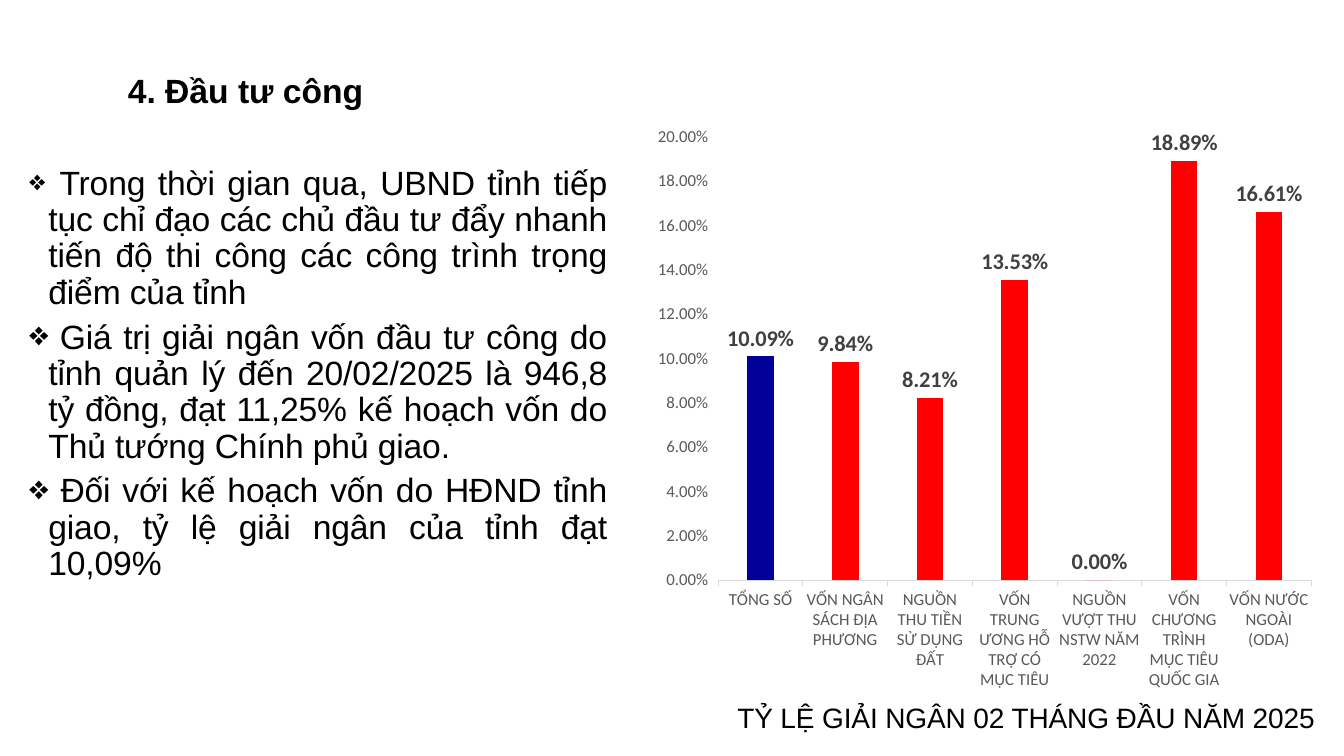
"""Build the public investment slide: bulleted text beside a disbursement rate chart."""
from lxml import etree
from pptx import Presentation
from pptx.chart.data import CategoryChartData
from pptx.dml.color import RGBColor
from pptx.enum.chart import XL_CHART_TYPE, XL_LABEL_POSITION, XL_TICK_MARK
from pptx.enum.text import MSO_ANCHOR, PP_ALIGN
from pptx.oxml.ns import qn
from pptx.util import Inches, Pt

COLUMNS = XL_CHART_TYPE.COLUMN_CLUSTERED
OUTSIDE_END = XL_LABEL_POSITION.OUTSIDE_END
TICK_OUT = XL_TICK_MARK.OUTSIDE
MIDDLE = MSO_ANCHOR.MIDDLE
LEFT, JUSTIFY = PP_ALIGN.LEFT, PP_ALIGN.JUSTIFY

BLACK = RGBColor(0, 0, 0)
RED = RGBColor(0xFF, 0, 0)
NAVY = RGBColor(0, 0, 0x99)
AXIS_GRAY = RGBColor(0x59, 0x59, 0x59)
LABEL_GRAY = RGBColor(0x40, 0x40, 0x40)
LINE_GRAY = RGBColor(0xD9, 0xD9, 0xD9)

HEADING = "4. Đầu tư công"
POINTS = [
    [(" ", 20), ("Trong thời gian qua, UBND tỉnh tiếp tục chỉ đạo các chủ đầu tư đẩy nhanh "
                 "tiến độ thi công các công trình trọng điểm của tỉnh", 24)],
    [(" Giá trị giải ngân vốn đầu tư công do tỉnh quản lý đến 20/02/2025 là 946,8 "
      "tỷ đồng, đạt 11,25% kế hoạch vốn do Thủ tướng Chính phủ giao.", 24)],
    [(" Đối với kế hoạch vốn do HĐND tỉnh giao, tỷ lệ giải ngân của tỉnh đạt 10,09%", 24)],
]
CAPTION = [[(" ", 24), ("TỶ LỆ GIẢI NGÂN 02 THÁNG ĐẦU NĂM 2025", 20)]]
RATES = {
    "TỔNG SỐ": 0.1009,
    "VỐN NGÂN SÁCH ĐỊA PHƯƠNG": 0.0984,
    "NGUỒN THU TIỀN SỬ DỤNG ĐẤT": 0.0821,
    "VỐN TRUNG ƯƠNG HỖ TRỢ CÓ MỤC TIÊU": 0.1353,
    "NGUỒN VƯỢT THU NSTW NĂM 2022": 0,
    "VỐN CHƯƠNG TRÌNH MỤC TIÊU QUỐC GIA": 0.1889,
    "VỐN NƯỚC NGOÀI (ODA)": 0.1661,
}
PERCENT = "0.00%"

HEADING_BOX = (1.17, 0.64, 11.4, 0.91)
POINTS_BOX = (0.19, 1.38, 5.93, 4.67)
CHART_BOX = (6.39, 1.14, 6.75, 5.82)
CAPTION_BOX = (7.12, 6.86, 6.2, 0.5)


def set_font(font, size, color, name="Calibri", bold=False):
    font.size, font.name, font.bold = Pt(size), name, bold
    font.color.rgb = color


def write_text(frame, paragraphs, align=LEFT, bold=False, after=0, line=None,
               tracking=None, bullet=None, indent=0):
    frame.word_wrap = True
    for index, runs in enumerate(paragraphs):
        paragraph = frame.add_paragraph() if index else frame.paragraphs[0]
        paragraph.alignment = align
        paragraph.space_after = Pt(after)
        paragraph.line_spacing = line
        if bullet:
            properties = paragraph._p.get_or_add_pPr()
            properties.set("marL", str(Inches(indent)))
            properties.set("indent", str(-Inches(indent)))
            etree.SubElement(properties, qn("a:buChar")).set("char", bullet)
        for text, size in runs:
            run = paragraph.add_run()
            run.text = text
            set_font(run.font, size, BLACK, name="Arial", bold=bold)
            if tracking:
                run._r.get_or_add_rPr().set("spc", str(tracking))


def add_text_table(slide, box, paragraphs, **text_format):
    table = slide.shapes.add_table(1, 1, *map(Inches, box)).table
    table.first_row = table.horz_banding = False
    cell = table.cell(0, 0)
    cell.fill.background()
    cell.vertical_anchor = MIDDLE
    write_text(cell.text_frame, paragraphs, align=JUSTIFY, after=6, tracking=-10, **text_format)


def add_rate_chart(slide):
    data = CategoryChartData(number_format=PERCENT)
    data.categories = list(RATES)
    data.add_series("Series 1", list(RATES.values()))
    chart = slide.shapes.add_chart(COLUMNS, *map(Inches, CHART_BOX), data).chart
    chart.has_title = chart.has_legend = False
    set_font(chart.font, 10, BLACK)

    for axis in (chart.category_axis, chart.value_axis):
        axis.has_major_gridlines = False
        axis.major_tick_mark = TICK_OUT
        set_font(axis.tick_labels.font, 12, AXIS_GRAY)
    category_line = chart.category_axis.format.line
    category_line.color.rgb, category_line.width = LINE_GRAY, Pt(0.75)
    rate_axis = chart.value_axis
    rate_axis.format.line.fill.background()
    rate_axis.minimum_scale, rate_axis.maximum_scale, rate_axis.major_unit = 0, 0.2, 0.02
    rate_axis.tick_labels.number_format = PERCENT
    rate_axis.tick_labels.number_format_is_linked = False

    plot = chart.plots[0]
    plot.vary_by_categories = False
    plot.gap_width, plot.overlap = 219, -27
    rates = plot.series[0]
    rates.invert_if_negative = False
    total = rates.points[0]
    for bar, color in ((rates, RED), (total, NAVY)):
        bar.format.fill.solid()
        bar.format.fill.fore_color.rgb = color
    labels = rates.data_labels
    labels.show_value = True
    labels.position = OUTSIDE_END
    labels.number_format, labels.number_format_is_linked = PERCENT, False
    set_font(labels.font, 16, LABEL_GRAY, bold=True)


def main():
    deck = Presentation()
    deck.slide_width, deck.slide_height = Inches(13.33), Inches(7.5)
    slide = deck.slides.add_slide(deck.slide_layouts[6])
    heading = slide.shapes.add_textbox(*map(Inches, HEADING_BOX))
    write_text(heading.text_frame, [[(HEADING, 24)]], bold=True)
    add_text_table(slide, POINTS_BOX, POINTS, line=0.97, bullet="❖", indent=0.19)
    add_rate_chart(slide)
    add_text_table(slide, CAPTION_BOX, CAPTION)
    deck.save("out.pptx")


if __name__ == "__main__":
    main()
